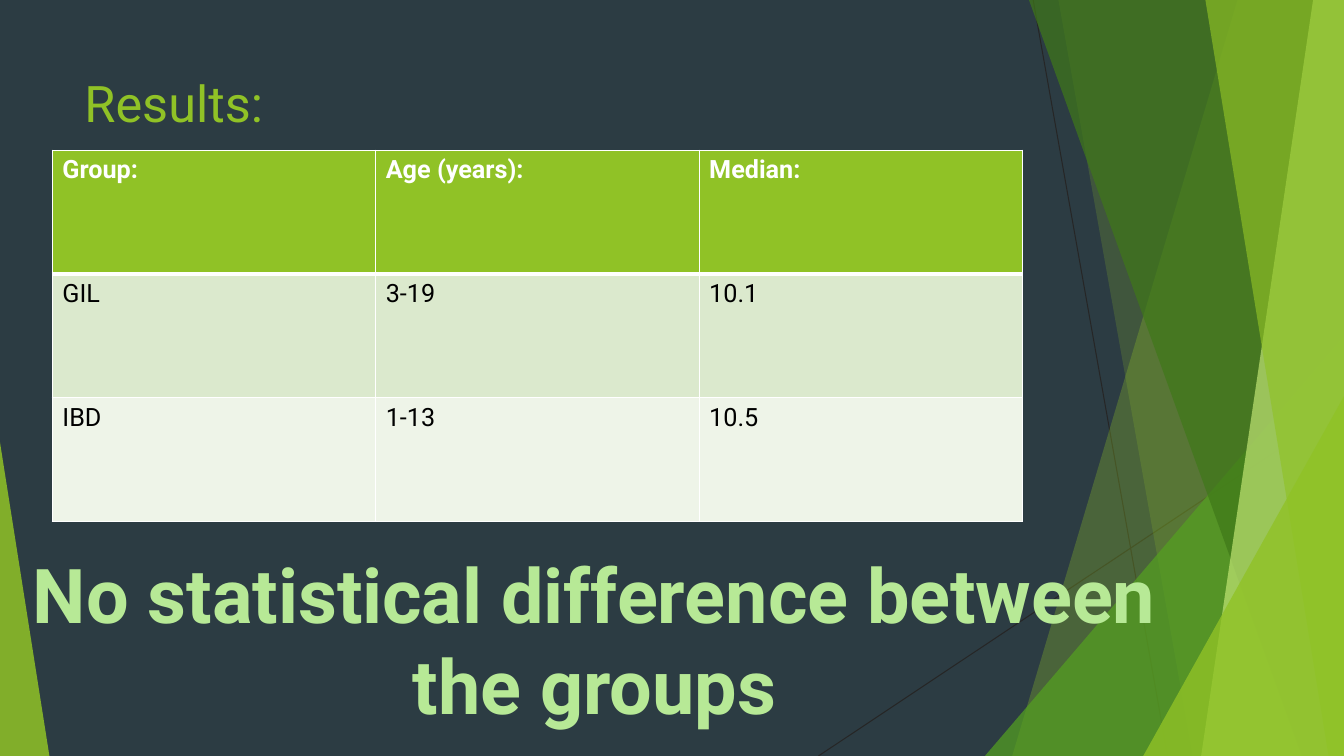
from dataclasses import dataclass

from lxml.etree import SubElement
from pptx import Presentation
from pptx.dml.color import RGBColor
from pptx.enum.shapes import MSO_CONNECTOR, MSO_SHAPE
from pptx.enum.text import MSO_ANCHOR, PP_ALIGN
from pptx.oxml import parse_xml
from pptx.oxml.ns import nsdecls, qn
from pptx.util import Pt


@dataclass(frozen=True)
class Theme:
    """Colours, font and type sizes of the slide."""
    background: str = "2C3C43"
    hairline: str = "262626"
    lime: str = "90C226"
    green: str = "54A021"
    forest: str = "3F7819"
    pale_lime: str = "C0E474"
    mint: str = "B7E996"
    white: str = "FFFFFF"
    black: str = "000000"
    bands: tuple = ("DBE9CD", "EEF4E8")
    font: str = "Roboto"
    title_size: int = 36
    table_size: int = 18
    conclusion_size: int = 54


@dataclass(frozen=True)
class Box:
    """A rectangle measured in points."""
    left: float
    top: float
    width: float
    height: float

    def lengths(self):
        """Return the four lengths as Pt values."""
        return Pt(self.left), Pt(self.top), Pt(self.width), Pt(self.height)


THEME = Theme()
PAGE = Box(0, 0, 960, 540)
RESULTS = [
    ("Group:", "Age (years):", "Median:"),
    ("GIL", "3-19", "10.1"),
    ("IBD", "1-13", "10.5"),
]


def paint(shape, color, opacity):
    """Give a shape a translucent fill without line or shadow."""
    shape.shadow.inherit = False
    shape.line.fill.background()
    shape.fill.solid()
    shape.fill.fore_color.rgb = RGBColor.from_string(color)
    tint = shape.fill._xPr.find(qn("a:solidFill"))[0]
    SubElement(tint, qn("a:alpha")).set("val", str(opacity * 1000))


def add_hairline(slide, box, begin, end):
    """Draw a thin line between two points of the box."""
    hairline = slide.shapes.add_connector(
        MSO_CONNECTOR.STRAIGHT,
        Pt(box.left + begin[0]), Pt(box.top + begin[1]),
        Pt(box.left + end[0]), Pt(box.top + end[1]))
    hairline.line.color.rgb = RGBColor.from_string(THEME.hairline)
    hairline.line.width = Pt(0.75)
    SubElement(hairline._element.spPr, qn("a:effectLst"))


def add_facet(slide, box, top_x, bottom_x, color, opacity):
    """Fill the box to the right of a slanted edge."""
    right, bottom = box.left + box.width, box.top + box.height
    outline = slide.shapes.build_freeform(
        box.left + top_x, box.top, scale=Pt(1))
    outline.add_line_segments([
        (right, box.top), (right, bottom), (box.left + bottom_x, bottom)])
    paint(outline.convert_to_shape(), color, opacity)


def add_corner(slide, box, left, width, height, apex, color, opacity):
    """Stand a right triangle on the bottom edge of the box."""
    place = Box(box.left + left, box.top + box.height - height, width, height)
    corner = slide.shapes.add_shape(
        MSO_SHAPE.ISOSCELES_TRIANGLE, *place.lengths())
    corner.adjustments[0] = apex
    paint(corner, color, opacity)


def add_backdrop(slide, box):
    """Layer the hairlines, facets and corners from back to front."""
    add_hairline(slide, box, (738, 0), (834, 540))
    add_hairline(slide, box, (960, 290), (584.6, 540))
    layers = [
        (add_facet, 884.4, 723, THEME.lime, 30),
        (add_facet, 756, 852, THEME.lime, 20),
        (add_corner, 703.5, 256.5, 300, 1, THEME.green, 72),
        (add_facet, 735, 929.5, THEME.forest, 70),
        (add_facet, 938.3, 858, THEME.pale_lime, 70),
        (add_facet, 861, 949, THEME.lime, 65),
        (add_corner, 816.6, 143.4, 257, 1, THEME.lime, 80),
        (add_corner, 0, 35.3, 224, 0, THEME.lime, 85),
    ]
    for draw, *settings in layers:
        draw(slide, box, *settings)


def style_text(frame, size, color, bold=False):
    """Format every run of a text frame."""
    for paragraph in frame.paragraphs:
        for run in paragraph.runs:
            run.font.name = THEME.font
            run.font.size = Pt(size)
            run.font.bold = bold
            run.font.color.rgb = RGBColor.from_string(color)


def add_words(slide, box, words, size, color, bold=False):
    """Place a wrapping text box and return its frame."""
    frame = slide.shapes.add_textbox(*box.lengths()).text_frame
    frame.word_wrap = True
    frame.vertical_anchor = MSO_ANCHOR.TOP
    frame.text = words
    style_text(frame, size, color, bold)
    return frame


def border_cell(cell, top, bottom):
    """Draw white borders around a table cell."""
    sides = {"lnL": 1, "lnR": 1, "lnT": top, "lnB": bottom}
    for position, (side, width) in enumerate(sides.items()):
        cell._tc.get_or_add_tcPr().insert(position, parse_xml(
            f'<a:{side} {nsdecls("a")} w="{Pt(width)}"><a:solidFill>'
            f'<a:srgbClr val="{THEME.white}"/></a:solidFill></a:{side}>'))


def add_results_table(slide, box, results):
    """Build the table with a header row and banded groups."""
    table = slide.shapes.add_table(
        len(results), len(results[0]), *box.lengths()).table
    for column in table.columns:
        column.width = Pt(box.width / len(results[0]))
    for index, values in enumerate(results):
        table.rows[index].height = Pt(box.height / len(results))
        header = index == 0
        fill = THEME.lime if header else THEME.bands[(index - 1) % 2]
        ink = THEME.white if header else THEME.black
        for cell, value in zip(table.rows[index].cells, values):
            cell.text_frame.text = value
            style_text(cell.text_frame, THEME.table_size, ink, header)
            cell.fill.solid()
            cell.fill.fore_color.rgb = RGBColor.from_string(fill)
            border_cell(cell, 3 if index == 1 else 1, 3 if header else 1)


def add_conclusion(slide, box, words):
    """Write the centred closing statement with a green outline."""
    frame = add_words(
        slide, box, words, THEME.conclusion_size, THEME.mint, bold=True)
    frame.paragraphs[0].alignment = PP_ALIGN.CENTER
    for run in frame.paragraphs[0].runs:
        run._r.get_or_add_rPr().insert(0, parse_xml(
            f'<a:ln {nsdecls("a")} w="{Pt(1.75)}"><a:solidFill>'
            f'<a:srgbClr val="{THEME.green}"/></a:solidFill></a:ln>'))


def build_results_slide(deck, box):
    """Assemble the results slide."""
    slide = deck.slides.add_slide(deck.slide_layouts[6])
    slide.background.fill.solid()
    slide.background.fill.fore_color.rgb = RGBColor.from_string(
        THEME.background)
    add_backdrop(slide, box)
    add_words(slide, Box(box.left + 53.3, box.top + 48.2, 676.8, 103.7),
              "Results:", THEME.title_size, THEME.lime)
    add_results_table(
        slide, Box(box.left + 37.4, box.top + 107.3, 693, 265.2), RESULTS)
    add_conclusion(slide, Box(box.left + 15.8, box.top + 388, 818, 138.2),
                   "No statistical difference between the groups")


def main():
    """Create and save the deck."""
    deck = Presentation()
    deck.slide_width, deck.slide_height = Pt(PAGE.width), Pt(PAGE.height)
    build_results_slide(deck, PAGE)
    deck.save("out.pptx")


if __name__ == "__main__":
    main()
